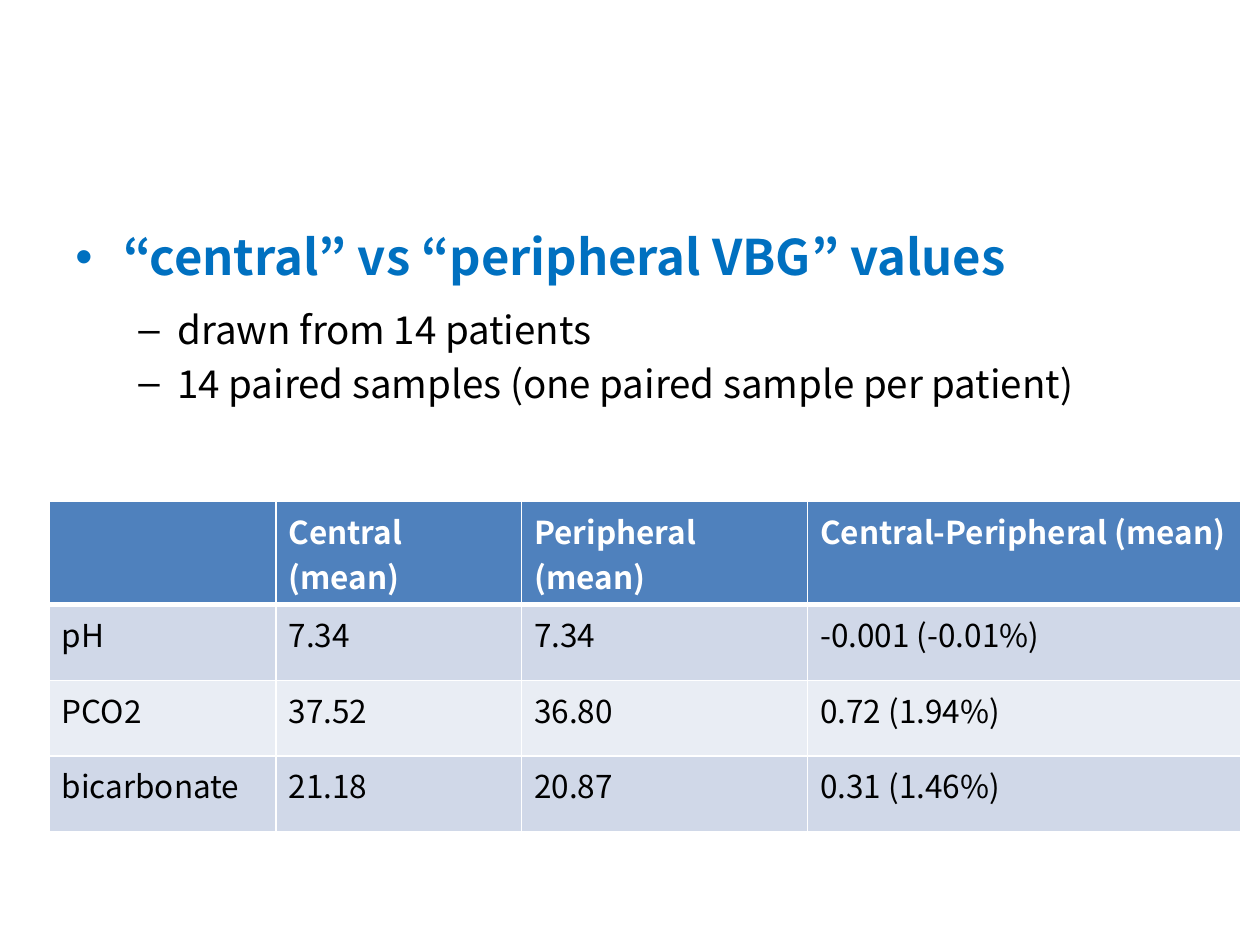
import lxml.etree
import pptx
import pptx.dml.color
import pptx.oxml
import pptx.oxml.ns
import pptx.util

Inches = pptx.util.Inches
Pt = pptx.util.Pt
RGBColor = pptx.dml.color.RGBColor

FONT = "Noto Sans CJK KR"
BLUE = RGBColor(0x00, 0x70, 0xC0)
BLACK = RGBColor(0x00, 0x00, 0x00)
WHITE = RGBColor(0xFF, 0xFF, 0xFF)
HEADER_FILL = RGBColor(0x4F, 0x81, 0xBD)
DARK_BAND = RGBColor(0xD0, 0xD8, 0xE8)
LIGHT_BAND = RGBColor(0xE9, 0xED, 0xF4)


def style_font(paragraph, size, color, bold):
    paragraph.font.name = FONT
    paragraph.font.size = Pt(size)
    paragraph.font.bold = bold
    paragraph.font.color.rgb = color


def set_borders(cell, bottom_width):
    """Give the cell white borders, 1 pt except at the bottom; call before filling."""
    properties = cell._tc.get_or_add_tcPr()
    for side, width in (("L", 1), ("R", 1), ("T", 1), ("B", bottom_width)):
        properties.append(pptx.oxml.parse_xml(
            f'<a:ln{side} {pptx.oxml.ns.nsdecls("a")} w="{Pt(width)}">'
            f'<a:solidFill><a:srgbClr val="{WHITE}"/></a:solidFill></a:ln{side}>'))


presentation = pptx.Presentation()
presentation.slide_width = Inches(10)
presentation.slide_height = Inches(7.5)
slide = presentation.slides.add_slide(presentation.slide_layouts[6])

# Bulleted text: text, level, bullet, left margin, hanging indent, size, colour, bold, space before
bullets = [
    ("“central” vs “peripheral VBG” values", 0, "•", 0.38, 0.38, 28, BLUE, True, 0),
    ("drawn from 14 patients", 1, "–", 0.81, 0.31, 22, BLACK, False, 11.5),
    ("14 paired samples (one paired sample per patient)", 1, "–", 0.81, 0.31, 22, BLACK, False, 4.4),
]
body = slide.shapes.add_textbox(Inches(0.5), Inches(1.75), Inches(9), Inches(4.95))
text_frame = body.text_frame
text_frame.word_wrap = True
for index, (text, level, bullet, margin, hanging, size, color, bold, gap) in enumerate(bullets):
    paragraph = text_frame.add_paragraph() if index else text_frame.paragraphs[0]
    paragraph.text = text
    paragraph.level = level
    paragraph.space_before = Pt(gap)
    style_font(paragraph, size, color, bold)
    properties = paragraph._p.get_or_add_pPr()
    properties.set("marL", str(Inches(margin)))
    properties.set("indent", str(-Inches(hanging)))
    bullet_font = pptx.oxml.parse_xml(
        f'<a:buFont {pptx.oxml.ns.nsdecls("a")} typeface="Arial"/>')
    bullet_character = pptx.oxml.parse_xml(
        f'<a:buChar {pptx.oxml.ns.nsdecls("a")} char="{bullet}"/>')
    default_run = properties.find(pptx.oxml.ns.qn("a:defRPr"))
    default_run.addprevious(bullet_font)
    default_run.addprevious(bullet_character)

# Comparison table
rows = [
    ("", "Central (mean)", "Peripheral (mean)", "Central-Peripheral (mean)"),
    ("pH", "7.34", "7.34", "-0.001 (-0.01%)"),
    ("PCO2", "37.52", "36.80", "0.72 (1.94%)"),
    ("bicarbonate", "21.18", "20.87", "0.31 (1.46%)"),
]
column_widths = [1.8, 1.95, 2.27, 3.44]
row_heights = [0.82, 0.6, 0.6, 0.6]
table = slide.shapes.add_table(
    len(rows), len(column_widths), Inches(0.39), Inches(3.98),
    Inches(sum(column_widths)), Inches(sum(row_heights))).table
for column, width in zip(table.columns, column_widths):
    column.width = Inches(width)
for table_row, height in zip(table.rows, row_heights):
    table_row.height = Inches(height)

for row_index, row in enumerate(rows):
    is_header = row_index == 0
    band = DARK_BAND if row_index % 2 else LIGHT_BAND
    for column_index, text in enumerate(row):
        cell = table.cell(row_index, column_index)
        set_borders(cell, 3 if is_header else 1)
        cell.fill.solid()
        cell.fill.fore_color.rgb = HEADER_FILL if is_header else band
        cell.text = text
        style_font(cell.text_frame.paragraphs[0], 18, WHITE if is_header else BLACK, is_header)

presentation.save("out.pptx")
